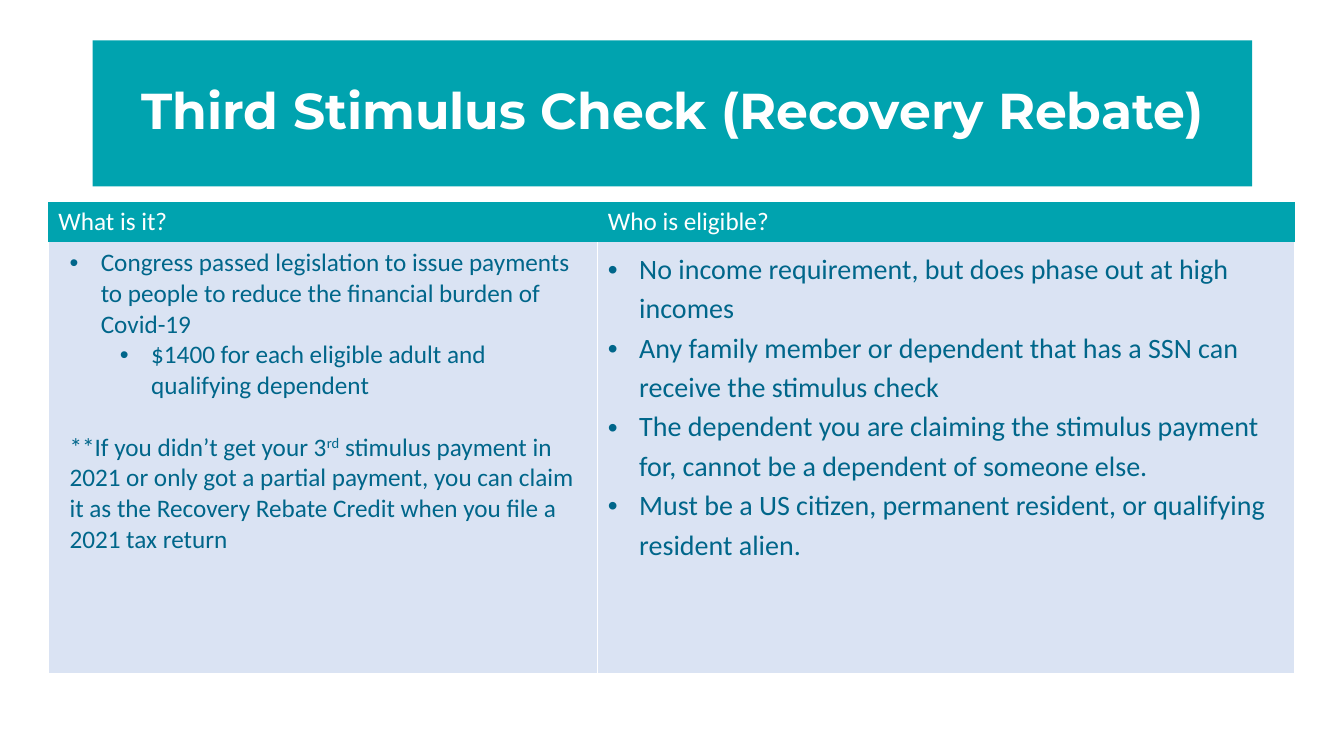
import dataclasses

import lxml.etree
import pptx
import pptx.dml.color
import pptx.enum.shapes
import pptx.enum.text
import pptx.oxml.ns
import pptx.util

Inches = pptx.util.Inches
Pt = pptx.util.Pt
qn = pptx.oxml.ns.qn

COLORS = {"teal": "00A3AF", "ink": "00668A", "pale": "DAE3F3", "white": "FFFFFF"}
NO_STYLE = "{2D5ABB26-0587-4C30-8999-92F81FD0307C}"
HANG = 0.31


@dataclasses.dataclass(frozen=True)
class Para:
    texts: tuple[str, ...]
    size: int = 18
    color: str = "ink"
    left: float = 0
    level: int = 0
    bullet: bool = True
    spacing: float = 1.0
    before: float = 0


@dataclasses.dataclass(frozen=True)
class Cell:
    paras: tuple[Para, ...]
    fill: str
    bordered: bool = False


def heading(text: str) -> Cell:
    return Cell((Para((text,), color="white", bullet=False),), "teal")


def rule(text: str) -> Para:
    return Para((text,), size=20, left=HANG, level=2, spacing=1.15)


WHAT = Cell((
    Para(("Congress passed legislation to issue payments to people to reduce "
          "the financial burden of Covid-19",), left=0.42),
    Para(("$1400 for each eligible adult and qualifying dependent",), left=0.92, level=1),
    Para(("**If you didn’t get your 3", "rd",
          " stimulus payment in 2021 or only got a partial payment, you can claim it as "
          "the Recovery Rebate Credit when you file a 2021 tax return"),
         left=0.11, bullet=False, before=22),
), "pale", True)

WHO = Cell((
    rule("No income requirement, but does phase out at high incomes"),
    rule("Any family member or dependent that has a SSN can receive the stimulus check"),
    rule("The dependent you are claiming the stimulus payment for, "
         "cannot be a dependent of someone else."),
    rule("Must be a US citizen, permanent resident, or qualifying resident alien."),
), "pale", True)

ROWS = ((heading("What is it?"), heading("Who is eligible?")), (WHAT, WHO))


def rgb(name: str) -> pptx.dml.color.RGBColor:
    return pptx.dml.color.RGBColor.from_string(COLORS[name])


def style_font(p, name: str, size: int, color: str, bold: bool = False) -> None:
    p.font.name = name
    p.font.size = Pt(size)
    p.font.bold = bold
    p.font.color.rgb = rgb(color)


def write_para(p, para: Para) -> None:
    for i, text in enumerate(para.texts):
        r = p.add_run()
        r.text = text
        if i == 1:
            r._r.get_or_add_rPr().set("baseline", "30000")
    p.level = para.level
    p.line_spacing = para.spacing
    p.space_before = Pt(para.before)
    style_font(p, "Calibri", para.size, para.color)
    pPr = p._p.get_or_add_pPr()
    pPr.set("marL", str(Inches(para.left)))
    pPr.set("indent", str(Inches(-HANG if para.bullet else 0)))
    if para.bullet:
        marks = (("a:buClr", {}), ("a:buFont", {"typeface": "Arial"}), ("a:buChar", {"char": "•"}))
        first = list(pPr).index(pPr.find(qn("a:defRPr")))
        for i, (tag, attrs) in enumerate(marks):
            mark = lxml.etree.Element(qn(tag), attrs)
            if tag == "a:buClr":
                lxml.etree.SubElement(mark, qn("a:srgbClr"), val=COLORS["ink"])
            pPr.insert(first + i, mark)


def add_borders(cell) -> None:
    tcPr = cell._tc.get_or_add_tcPr()
    for i, side in enumerate(("L", "R", "B")):
        ln = lxml.etree.Element(qn(f"a:ln{side}"), w=str(Pt(1)))
        fill = lxml.etree.SubElement(ln, qn("a:solidFill"))
        lxml.etree.SubElement(fill, qn("a:srgbClr"), val=COLORS["white"])
        tcPr.insert(i, ln)


def write_cell(cell, content: Cell) -> None:
    cell.fill.solid()
    cell.fill.fore_color.rgb = rgb(content.fill)
    tf = cell.text_frame
    for i, para in enumerate(content.paras):
        write_para(tf.add_paragraph() if i else tf.paragraphs[0], para)
    if content.bordered:
        add_borders(cell)


def add_rebate_table(s) -> None:
    frame = s.shapes.add_table(2, 2, Inches(0.48), Inches(2), Inches(12.36), Inches(4.68))
    table = frame.table
    table._tbl.tblPr.find(qn("a:tableStyleId")).text = NO_STYLE
    table.horz_banding = False
    for column, width in zip(table.columns, (5.45, 6.91)):
        column.width = Inches(width)
    for row, height, contents in zip(table.rows, (0.4, 4.28), ROWS):
        row.height = Inches(height)
        for cell, content in zip(row.cells, contents):
            write_cell(cell, content)


def add_title(s, text: str) -> None:
    sp = s.shapes.add_shape(pptx.enum.shapes.MSO_SHAPE.RECTANGLE,
                            Inches(0.92), Inches(0.4), Inches(11.5), Inches(1.45))
    sp.shadow.inherit = False
    sp.fill.solid()
    sp.fill.fore_color.rgb = rgb("teal")
    sp.line.fill.background()
    tf = sp.text_frame
    tf.word_wrap = True
    tf.vertical_anchor = pptx.enum.text.MSO_ANCHOR.MIDDLE
    p = tf.paragraphs[0]
    p.text = text
    p.alignment = pptx.enum.text.PP_ALIGN.CENTER
    p.line_spacing = 0.9
    style_font(p, "Montserrat", 36, "white", bold=True)


def main() -> None:
    """Build the stimulus check slide and save it."""
    prs = pptx.Presentation()
    prs.slide_width, prs.slide_height = Inches(13.33), Inches(7.5)
    s = prs.slides.add_slide(prs.slide_layouts[6])
    add_rebate_table(s)
    add_title(s, "Third Stimulus Check (Recovery Rebate)")
    prs.save("out.pptx")


if __name__ == "__main__":
    main()
